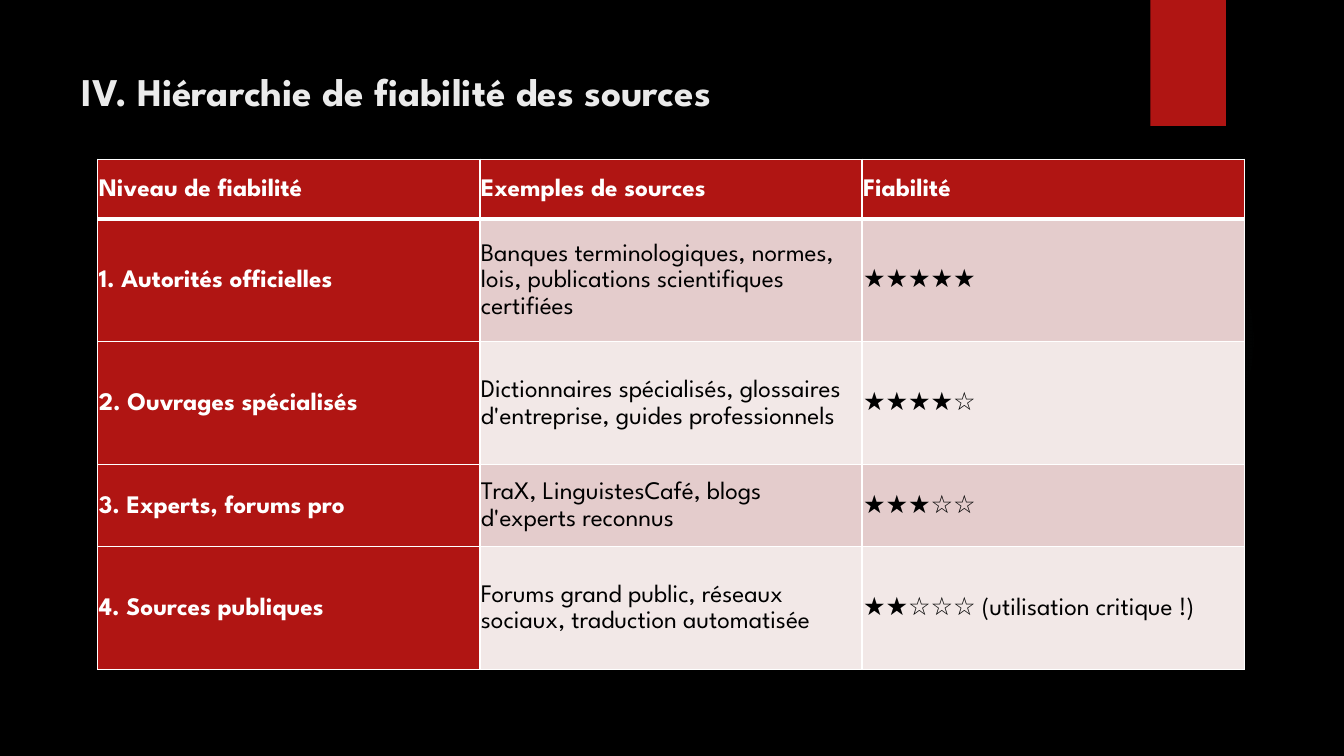
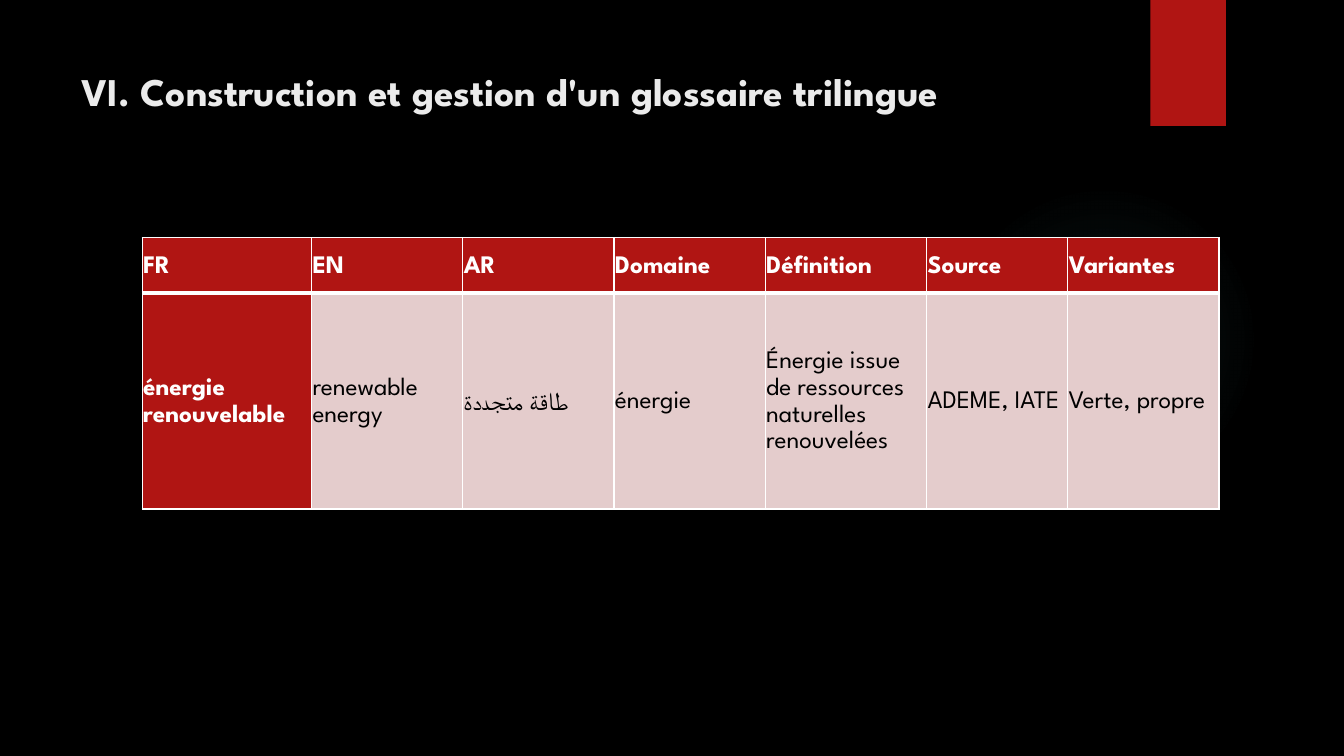
import pptx
import pptx.dml.color
import pptx.enum.shapes
import pptx.enum.text
import pptx.oxml
import pptx.oxml.ns
import pptx.util

Inches = pptx.util.Inches
Pt = pptx.util.Pt
RGBColor = pptx.dml.color.RGBColor
Shape = pptx.enum.shapes.MSO_SHAPE
Anchor = pptx.enum.text.MSO_ANCHOR
Align = pptx.enum.text.PP_ALIGN

BLACK = RGBColor(0x00, 0x00, 0x00)
WHITE = RGBColor(0xFF, 0xFF, 0xFF)
TITLE_GREY = RGBColor(0xEB, 0xEB, 0xEB)
RED = RGBColor(0xB0, 0x15, 0x13)
BAND_DARK = RGBColor(0xE4, 0xCC, 0xCC)
BAND_LIGHT = RGBColor(0xF2, 0xE8, 0xE7)
GLOW_TEAL = RGBColor(0x50, 0xB9, 0xC1)
GLOW_STOPS = [(0, 7), (36, 6), (69, 0), (100, 0)]
FONT = "League Spartan"


def write(frame, text, size=18, color=BLACK, bold=False, line=None, after=0):
    frame.word_wrap = True
    paragraph = frame.paragraphs[0]
    paragraph.alignment = Align.LEFT
    paragraph.space_before = Pt(0)
    paragraph.space_after = Pt(after)
    if line:
        paragraph.line_spacing = line
    run = paragraph.add_run()
    run.text = text
    run.font.name = FONT
    run.font.size = Pt(size)
    run.font.bold = bold
    run.font.color.rgb = color


def set_borders(cell, **widths):
    properties = cell._tc.get_or_add_tcPr()
    for position, side in enumerate("LRTB"):
        border = pptx.oxml.parse_xml(
            f'<a:ln{side} {pptx.oxml.ns.nsdecls("a")} w="{Pt(widths.get(side, 1))}">'
            f'<a:solidFill><a:srgbClr val="{WHITE}"/></a:solidFill></a:ln{side}>'
        )
        properties.insert(position, border)


class Deck:
    def __init__(self):
        self.presentation = pptx.Presentation()
        self.presentation.slide_width = Inches(13.33)
        self.presentation.slide_height = Inches(7.5)
        backdrop = self.presentation.slide_master.background.fill
        backdrop.solid()
        backdrop.fore_color.rgb = BLACK
        self.slide = None

    def start_slide(self, title, title_height):
        layout = self.presentation.slide_layouts[5]
        self.slide = self.presentation.slides.add_slide(layout)
        self.add_glow()
        ribbon = self.add_plain(Shape.RECTANGLE, 11.41, 0, 0.75, 1.25)
        ribbon.fill.solid()
        ribbon.fill.fore_color.rgb = RED
        self.add_title(title, title_height)

    def add_plain(self, kind, left, top, width, height):
        shape = self.slide.shapes.add_shape(
            kind, Inches(left), Inches(top), Inches(width), Inches(height)
        )
        shape.shadow.inherit = False
        shape.line.fill.background()
        return shape

    def add_glow(self):
        glow = self.add_plain(Shape.OVAL, 9.41, 1.83, 3.08, 3.08)
        glow.fill.gradient()
        stops = "".join(
            f'<a:gs pos="{position * 1000}"><a:srgbClr val="{GLOW_TEAL}">'
            f'<a:alpha val="{alpha * 1000}"/></a:srgbClr></a:gs>'
            for position, alpha in GLOW_STOPS
        )
        radial = pptx.oxml.parse_xml(
            f'<a:gradFill {pptx.oxml.ns.nsdecls("a")} rotWithShape="1">'
            f'<a:gsLst>{stops}</a:gsLst><a:path path="circle">'
            '<a:fillToRect l="50000" t="50000" r="50000" b="50000"/>'
            "</a:path></a:gradFill>"
        )
        linear = glow.element.spPr.find(pptx.oxml.ns.qn("a:gradFill"))
        linear.getparent().replace(linear, radial)

    def add_title(self, text, height):
        title = self.slide.shapes.title
        title.left, title.top = Inches(0.71), Inches(0.5)
        title.width, title.height = Inches(10.29), Inches(height)
        frame = title.text_frame
        frame.auto_size = pptx.enum.text.MSO_AUTO_SIZE.NONE
        frame.vertical_anchor = Anchor.TOP
        frame.margin_top = Inches(0.17)
        write(frame, text, size=28, color=TITLE_GREY, bold=True)

    def add_grid(self, left, top, widths, heights, rows):
        table = self.slide.shapes.add_table(
            len(heights), len(widths), Inches(left), Inches(top),
            Inches(sum(widths)), Inches(sum(heights)),
        ).table
        for column, width in zip(table.columns, widths):
            column.width = Inches(width)
        for row, height in zip(table.rows, heights):
            row.height = Inches(height)
        for row_index, texts in enumerate(rows):
            for column_index, text in enumerate(texts):
                cell = table.cell(row_index, column_index)
                self.fill_cell(cell, text, row_index, column_index)

    def fill_cell(self, cell, text, row_index, column_index):
        heading = row_index == 0 or column_index == 0
        band = BAND_DARK if row_index % 2 else BAND_LIGHT
        cell.fill.solid()
        cell.fill.fore_color.rgb = RED if heading else band
        cell.vertical_anchor = Anchor.MIDDLE
        cell.margin_left = cell.margin_right = Inches(0.01)
        cell.margin_top = cell.margin_bottom = Inches(0.01)
        write(cell.text_frame, text, color=WHITE if heading else BLACK,
              bold=heading, line=1.15, after=8)
        set_borders(cell, T=3 if row_index == 1 else 1,
                    B=3 if row_index == 0 else 1)


def main():
    deck = Deck()

    deck.start_slide("IV. Hiérarchie de fiabilité des sources", 0.8)
    reliability = [
        ("Niveau de fiabilité", "Exemples de sources", "Fiabilité"),
        ("1. Autorités officielles",
         "Banques terminologiques, normes, lois, publications scientifiques certifiées",
         "★★★★★"),
        ("2. Ouvrages spécialisés",
         "Dictionnaires spécialisés, glossaires d'entreprise, guides professionnels",
         "★★★★☆"),
        ("3. Experts, forums pro",
         "TraX, LinguistesCafé, blogs d'experts reconnus",
         "★★★☆☆"),
        ("4. Sources publiques",
         "Forums grand public, réseaux sociaux, traduction automatisée",
         "★★☆☆☆ (utilisation critique !)"),
    ]
    deck.add_grid(0.97, 1.58, [3.79] * 3, [0.59, 1.22, 1.22, 0.81, 1.22], reliability)

    deck.start_slide("VI. Construction et gestion d'un glossaire trilingue", 0.86)
    glossary = [
        ("FR", "EN", "AR", "Domaine", "Définition", "Source", "Variantes"),
        ("énergie renouvelable", "renewable energy", "طاقة متجددة", "énergie",
         "Énergie issue de ressources naturelles renouvelées", "ADEME, IATE",
         "Verte, propre"),
    ]
    deck.add_grid(1.41, 2.36, [1.68, 1.5, 1.5, 1.5, 1.6, 1.4, 1.5], [0.55, 2.14], glossary)

    deck.presentation.save("out.pptx")


if __name__ == "__main__":
    main()
